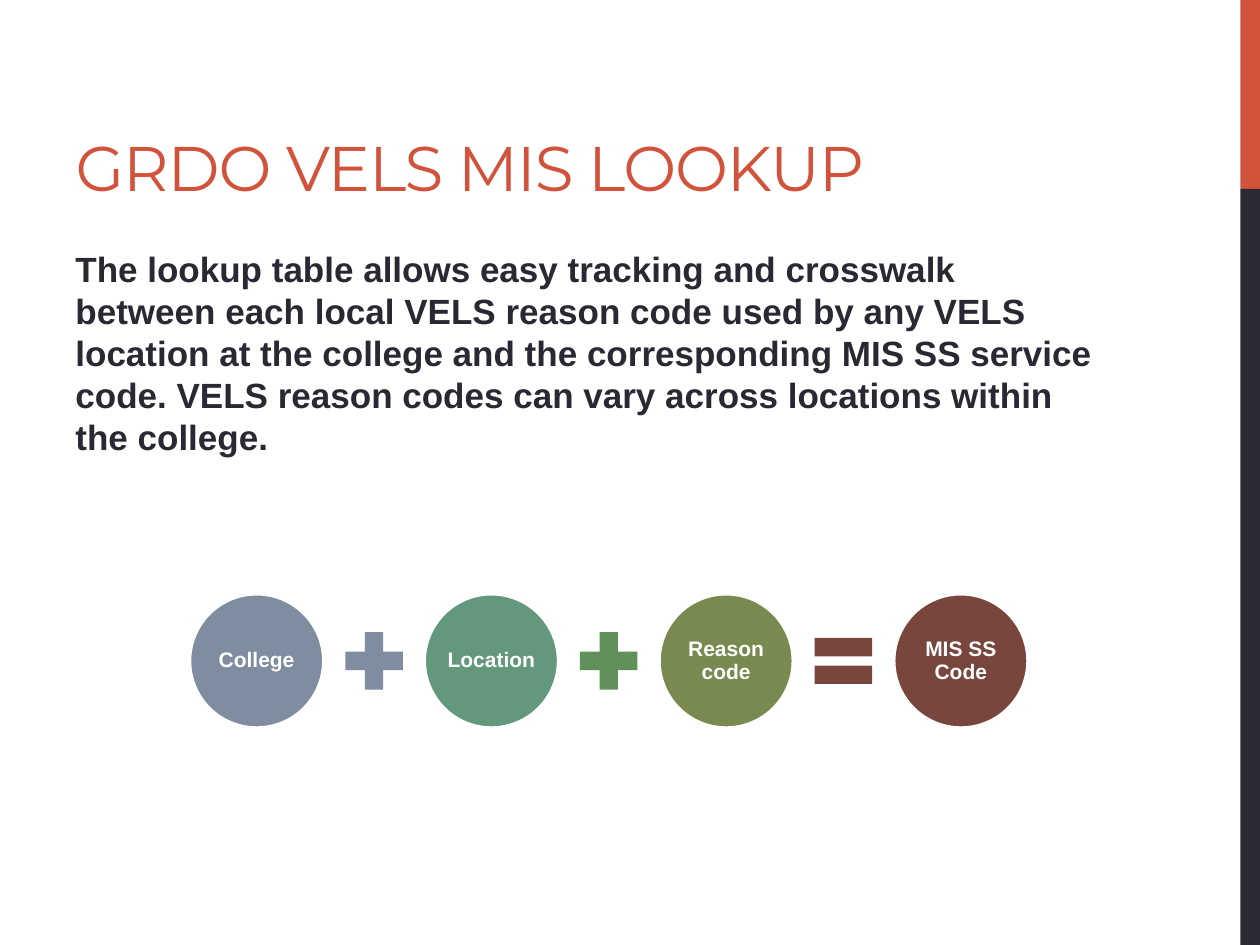
import pptx
import pptx.util
import pptx.dml.color
import pptx.enum.shapes
import pptx.enum.text

Pt = pptx.util.Pt
RGB = pptx.dml.color.RGBColor
SHAPE = pptx.enum.shapes.MSO_SHAPE
ANCHOR = pptx.enum.text.MSO_ANCHOR
ALIGN = pptx.enum.text.PP_ALIGN

RED = RGB(0xD2, 0x53, 0x3C)
DARK = RGB(0x29, 0x29, 0x34)
WHITE = RGB(0xFF, 0xFF, 0xFF)
SLATE = RGB(0x80, 0x8D, 0xA0)
TEAL = RGB(0x64, 0x98, 0x7C)
GREEN = RGB(0x61, 0x91, 0x5A)
OLIVE = RGB(0x78, 0x8A, 0x50)
BROWN = RGB(0x79, 0x46, 0x3D)

TERMS = [("College", SLATE), ("Location", TEAL), ("Reason code", OLIVE), ("MIS SS Code", BROWN)]
SIGNS = [(SHAPE.MATH_PLUS, SLATE), (SHAPE.MATH_PLUS, GREEN), (SHAPE.MATH_EQUAL, BROWN)]
BODY = (
    "The lookup table allows easy tracking and crosswalk between each local VELS "
    "reason code used by any VELS location at the college and the corresponding "
    "MIS SS service code. VELS reason codes can vary across locations within the college."
)


def add_run(para, text, font, size, color, bold=False):
    run = para.add_run()
    run.text = text
    run.font.name = font
    run.font.size = Pt(size)
    run.font.color.rgb = color
    run.font.bold = bold
    return run


def add_fill(slide, kind, box, color):
    shape = slide.shapes.add_shape(kind, *map(Pt, box))
    shape.shadow.inherit = False
    shape.fill.solid()
    shape.fill.fore_color.rgb = color
    shape.line.fill.background()
    return shape


def add_side(slide, box):
    left, top, width, height = box
    head = height / 5
    add_fill(slide, SHAPE.RECTANGLE, (left, top, width, head), RED)
    add_fill(slide, SHAPE.RECTANGLE, (left, top + head, width, height - head), DARK)


def add_title(slide, box):
    title = slide.shapes.title
    title.left, title.top, title.width, title.height = map(Pt, box)
    frame = title.text_frame
    frame.word_wrap = True
    frame.vertical_anchor = ANCHOR.BOTTOM
    para = frame.paragraphs[0]
    para.alignment = ALIGN.LEFT
    run = add_run(para, "GRDO VELS MIS LOOKUP", "Montserrat", 36, RED)
    run.font._element.set("spc", "-60")


def add_body(slide, box):
    frame = slide.shapes.add_textbox(*map(Pt, box)).text_frame
    frame.word_wrap = True
    para = frame.paragraphs[0]
    para.space_after = Pt(6)
    add_run(para, BODY, "Arial", 20, DARK, True)


def add_term(slide, box, text, color):
    disc = add_fill(slide, SHAPE.OVAL, box, color)
    disc.line.color.rgb = WHITE
    disc.line.width = Pt(2.25)
    frame = disc.text_frame
    frame.word_wrap = True
    frame.vertical_anchor = ANCHOR.MIDDLE
    frame.margin_left = frame.margin_right = Pt(1.2)
    frame.margin_top = frame.margin_bottom = Pt(1.2)
    para = frame.paragraphs[0]
    para.alignment = ALIGN.CENTER
    para.line_spacing = 0.9
    add_run(para, text, "Arial", 12, WHITE, True)


def add_sum(slide, box):
    left, top, width, size = box
    sign = size * 0.58
    step = (width - size) / (len(TERMS) - 1)
    gap = (step - size - sign) / 2
    for i, (text, color) in enumerate(TERMS):
        add_term(slide, (left + i * step, top, size, size), text, color)
    for i, (kind, color) in enumerate(SIGNS):
        place = (left + i * step + size + gap, top + (size - sign) / 2, sign, sign)
        add_fill(slide, kind, place, color)


def main():
    deck = pptx.Presentation()
    deck.slide_width, deck.slide_height = Pt(720), Pt(540)
    slide = deck.slides.add_slide(deck.slide_layouts[5])
    add_side(slide, (708.75, 0, 11.25, 540))
    add_title(slide, (36, 12, 618, 108))
    add_body(slide, (36, 138, 600, 344))
    add_sum(slide, (108.2, 339.2, 479.4, 77))
    deck.save("out.pptx")


if __name__ == "__main__":
    main()
